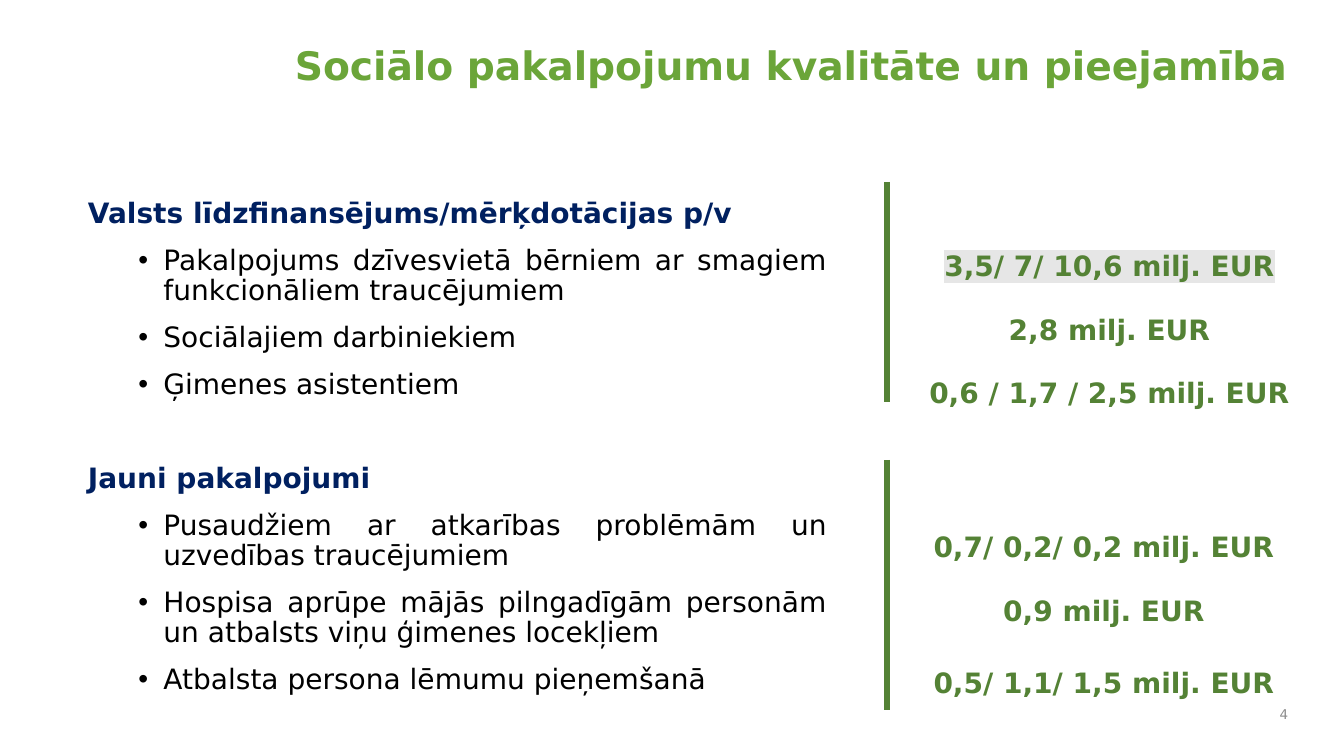
from dataclasses import dataclass

from lxml import etree
from pptx import Presentation
from pptx import util as u
from pptx.dml.color import RGBColor
from pptx.enum import shapes, text
from pptx.oxml import ns


@dataclass(frozen=True)
class Theme:
    font: str = "DejaVu Sans"
    title_color: str = "6BA539"
    heading_color: str = "002060"
    body_color: str = "000000"
    amount_color: str = "548235"
    highlight_color: str = "E6E6E6"
    number_color: str = "8C8C8C"
    title_size: float = 28
    body_size: float = 20
    number_size: float = 9.6
    rule_width: float = 4.5


THEME = Theme()
LEFT, CENTER = text.PP_ALIGN.LEFT, text.PP_ALIGN.CENTER
RIGHT, JUSTIFY = text.PP_ALIGN.RIGHT, text.PP_ALIGN.JUSTIFY

SECTIONS = [
    ("Valsts līdzfinansējums/mērķdotācijas p/v", [
        "Pakalpojums dzīvesvietā bērniem ar smagiem funkcionāliem traucējumiem",
        "Sociālajiem darbiniekiem",
        "Ģimenes asistentiem",
    ]),
    ("Jauni pakalpojumi", [
        "Pusaudžiem ar atkarības problēmām un uzvedības traucējumiem",
        "Hospisa aprūpe mājās pilngadīgām personām un atbalsts viņu ģimenes locekļiem",
        "Atbalsta persona lēmumu pieņemšanā",
    ]),
]
AMOUNTS = [
    ((909, 196, 401, 219), [
        ("3,5/ 7/ 10,6 milj. EUR", 0, THEME.highlight_color),
        ("2,8 milj. EUR", 24, None),
        ("0,6 / 1,7 / 2,5 milj. EUR", 24, None),
    ]),
    ((909, 477, 390, 238), [
        ("0,7/ 0,2/ 0,2 milj. EUR", 0, None),
        ("0,9 milj. EUR", 24, None),
        ("0,5/ 1,1/ 1,5 milj. EUR", 30, None),
    ]),
]
RULE_X = 887
RULES = [(182, 402), (460, 710)]


def px(value):
    return u.Emu(round(value * 914400 / 100.8))


def write(frame, content, *, color, size=THEME.body_size, bold=False, align=LEFT,
          before=0, spacing=0.9, bullet=False, highlight=None):
    first = frame.paragraphs[0]
    paragraph = frame.add_paragraph() if first.runs else first
    paragraph.alignment = align
    paragraph.line_spacing = spacing
    paragraph.space_before = u.Pt(before)
    if bullet:
        properties = paragraph._p.get_or_add_pPr()
        properties.set("marL", str(u.Inches(0.75)))
        properties.set("indent", str(-u.Inches(0.25)))
        etree.SubElement(properties, ns.qn("a:buFont"), typeface="Arial")
        etree.SubElement(properties, ns.qn("a:buChar"), char="•")
    run = paragraph.add_run()
    run.text = content
    run.font.name = THEME.font
    run.font.size = u.Pt(size)
    run.font.bold = bold
    run.font.color.rgb = RGBColor.from_string(color)
    if highlight:
        mark = etree.Element(ns.qn("a:highlight"))
        etree.SubElement(mark, ns.qn("a:srgbClr"), val=highlight)
        run._r.rPr.find(ns.qn("a:latin")).addprevious(mark)


class SlideBuilder:
    def __init__(self, theme, slide):
        self.theme = theme
        self.slide = slide

    def frame(self, left, top, width, height, inset_top=5, anchor=text.MSO_ANCHOR.TOP):
        shape = self.slide.shapes.add_textbox(px(left), px(top), px(width), px(height))
        frame = shape.text_frame
        frame.word_wrap = True
        frame.auto_size = text.MSO_AUTO_SIZE.NONE
        frame.margin_top = px(inset_top)
        frame.vertical_anchor = anchor
        return frame

    def title(self, content):
        write(self.frame(285, 42, 1025, 114), content, color=self.theme.title_color,
              size=self.theme.title_size, bold=True)

    def services(self, sections):
        frame = self.frame(78, 142, 759, 589, inset_top=57)
        for index, (heading, items) in enumerate(sections):
            write(frame, heading, color=self.theme.heading_color, bold=True,
                  align=JUSTIFY, before=45.5 if index else 0)
            for item in items:
                write(frame, item, color=self.theme.body_color, align=JUSTIFY,
                      before=12, bullet=True)

    def amounts(self, box, rows):
        frame = self.frame(*box, inset_top=56)
        for content, before, highlight in rows:
            write(frame, content, color=self.theme.amount_color, bold=True,
                  align=CENTER, before=before, highlight=highlight)

    def rule(self, x, top, bottom):
        connector = self.slide.shapes.add_connector(
            shapes.MSO_CONNECTOR.STRAIGHT, px(x), px(top), px(x), px(bottom))
        connector.line.color.rgb = RGBColor.from_string(self.theme.amount_color)
        connector.line.width = u.Pt(self.theme.rule_width)
        etree.SubElement(connector._element.spPr, ns.qn("a:effectLst"))

    def number(self, content):
        frame = self.frame(1254, 698, 44, 33, anchor=text.MSO_ANCHOR.MIDDLE)
        write(frame, content, color=self.theme.number_color,
              size=self.theme.number_size, align=RIGHT, spacing=1.0)


def main():
    presentation = Presentation()
    presentation.slide_width, presentation.slide_height = px(1344), px(756)
    slide = presentation.slides.add_slide(presentation.slide_layouts[6])
    builder = SlideBuilder(THEME, slide)
    builder.title("Sociālo pakalpojumu kvalitāte un pieejamība")
    builder.services(SECTIONS)
    builder.number("4")
    for box, rows in AMOUNTS:
        builder.amounts(box, rows)
    for top, bottom in RULES:
        builder.rule(RULE_X, top, bottom)
    presentation.save("out.pptx")


if __name__ == "__main__":
    main()
